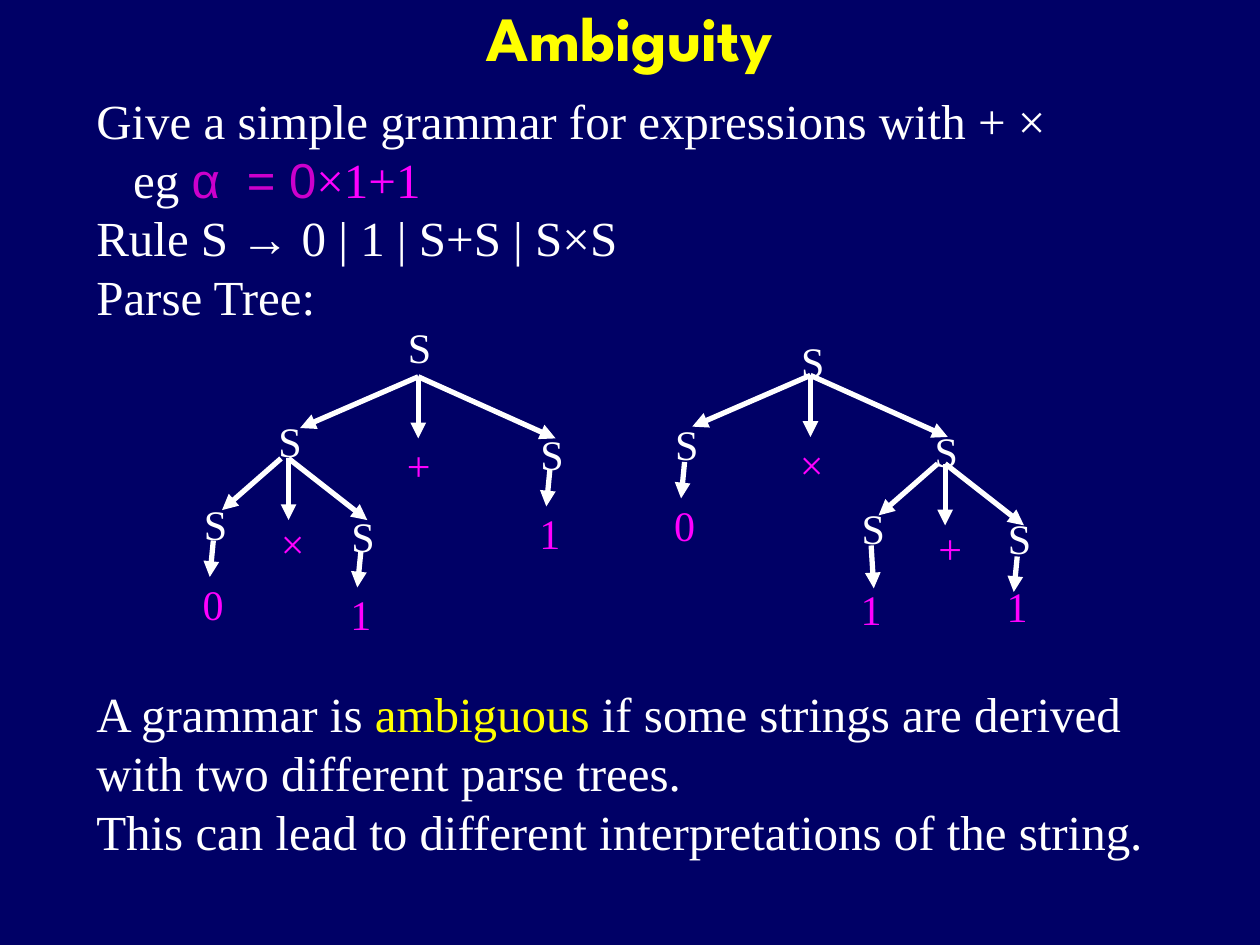
"""Build a slide on grammar ambiguity with two parse trees."""
import pptx
import pptx.dml.color
import pptx.enum.shapes
import pptx.enum.text
import pptx.oxml.ns
import pptx.util
from lxml import etree

Pt = pptx.util.Pt
RGBColor = pptx.dml.color.RGBColor
qn = pptx.oxml.ns.qn

NAVY = RGBColor(0x00, 0x00, 0x66)
WHITE = RGBColor(0xFF, 0xFF, 0xFF)
YELLOW = RGBColor(0xFF, 0xFF, 0x00)
PURPLE = RGBColor(0xCC, 0x00, 0xCC)
MAGENTA = RGBColor(0xFF, 0x00, 0xFF)
SERIF, SANS, DISPLAY = "Times New Roman", "Arial", "League Spartan"

TITLE = "Ambiguity"
INTRO = [
    (0, [("Give a simple grammar for expressions with + ×", WHITE, SERIF)]),
    (21, [("eg ", WHITE, SERIF), ("α  = 0", PURPLE, SANS), ("×1+1", MAGENTA, SERIF)]),
    (0, [("Rule S → 0 | 1 | S+S | S×S", WHITE, SERIF)]),
    (0, [("Parse Tree:", WHITE, SERIF)]),
]
CONCLUSION = [
    (0, [("A grammar is ", WHITE, SERIF), ("ambiguous", YELLOW, SERIF),
         (" if some strings are derived\nwith two different parse trees.", WHITE, SERIF)]),
    (0, [("This can lead to different interpretations of the string.", WHITE, SERIF)]),
]

ROOT_FAN = [(0, -67.5, 29.3), (0, 0, 35.2), (0, 78.5, 35.2)]
INNER_FAN = [(-4.3, -38, 29.5), (0, 0, 35.2), (0, 45, 35.2)]

# (fan apexes), (letters: text, left, top), (leaves: digit, left, top, arrow start, dx, dy, digit drop)
TREES = [
    {
        "apexes": [(239, 215.3), (164.9, 262)],
        "letters": [("S", 226, 180), ("+", 225.4, 247.7), ("S", 152, 234), ("×", 153.4, 292.3)],
        "leaves": [("1", 193.7, 288, 27.4, -2, 20.3, 44.8),
                   ("0", 109.4, 281.5, 27.4, -2, 20.8, 45.4),
                   ("1", 301.7, 241.2, 27.4, -2, 20.8, 45.4)],
    },
    {
        "apexes": [(463.1, 214.5), (540.1, 265)],
        "letters": [("S", 450.7, 188), ("×", 450, 247), ("S", 527, 239.8), ("+", 529.2, 295.2)],
        "leaves": [("1", 568.8, 289.4, 28.6, -2, 20.3, 39),
                   ("1", 485.3, 283.7, 28, 1.5, 24.5, 46.1),
                   ("0", 378.7, 235.4, 28.6, -2, 20.8, 46.8)],
    },
]


def add_text(slide, left, top, width, height, paragraphs):
    frame = slide.shapes.add_textbox(Pt(left), Pt(top), Pt(width), Pt(height)).text_frame
    frame.word_wrap = True
    for index, (indent, pieces) in enumerate(paragraphs):
        paragraph = frame.paragraphs[0] if index == 0 else frame.add_paragraph()
        paragraph.font.size = Pt(28)
        if indent:
            paragraph._p.get_or_add_pPr().set("marL", str(Pt(indent)))
        for text, color, font_name in pieces:
            for line_number, line in enumerate(text.split("\n")):
                if line_number:
                    paragraph.add_line_break()
                run = paragraph.add_run()
                run.text = line
                run.font.size = Pt(28)
                run.font.name = font_name
                run.font.color.rgb = color


def add_symbol(group, text, left, top):
    width = 26.6 if text.isdigit() else 28
    frame = group.shapes.add_textbox(Pt(left), Pt(top), Pt(width), Pt(36)).text_frame
    frame.word_wrap = False
    frame.auto_size = pptx.enum.text.MSO_AUTO_SIZE.SHAPE_TO_FIT_TEXT
    paragraph = frame.paragraphs[0]
    paragraph.text = text
    paragraph.font.size = Pt(24)
    paragraph.font.name = SERIF
    paragraph.font.color.rgb = WHITE if text == "S" else MAGENTA


def add_arrow(group, start_x, start_y, end_x, end_y):
    arrow = group.shapes.add_connector(
        pptx.enum.shapes.MSO_CONNECTOR.STRAIGHT,
        Pt(start_x), Pt(start_y), Pt(end_x), Pt(end_y))
    arrow.line.color.rgb = WHITE
    arrow.line.width = Pt(3)
    etree.SubElement(arrow.line._get_or_add_ln(), qn("a:tailEnd"), type="triangle")
    etree.SubElement(arrow._element.spPr, qn("a:effectLst"))


def add_tree(slide, tree):
    group = slide.shapes.add_group_shape()
    for (x, y), fan in zip(tree["apexes"], (ROOT_FAN, INNER_FAN)):
        for start_dx, end_dx, end_dy in fan:
            add_arrow(group, x + start_dx, y, x + end_dx, y + end_dy)
    for text, left, top in tree["letters"]:
        add_symbol(group, text, left, top)
    for digit, left, top, start, dx, dy, drop in tree["leaves"]:
        add_symbol(group, "S", left, top)
        x, y = left + 12.5, top + start
        add_arrow(group, x, y, x + dx, y + dy)
        add_symbol(group, digit, left - 0.6, top + drop)


def add_title(slide):
    title = slide.shapes.title
    title.left, title.top, title.width, title.height = Pt(54), Pt(-24), Pt(612), Pt(90)
    title.text_frame.vertical_anchor = pptx.enum.text.MSO_ANCHOR.MIDDLE
    paragraph = title.text_frame.paragraphs[0]
    paragraph.text = TITLE
    paragraph.alignment = pptx.enum.text.PP_ALIGN.CENTER
    paragraph.font.size = Pt(36)
    paragraph.font.bold = True
    paragraph.font.name = DISPLAY
    paragraph.font.color.rgb = YELLOW


def main():
    presentation = pptx.Presentation()
    presentation.slide_width, presentation.slide_height = Pt(720), Pt(540)
    slide = presentation.slides.add_slide(presentation.slide_layouts[5])
    slide.background.fill.solid()
    slide.background.fill.fore_color.rgb = NAVY
    add_title(slide)
    add_text(slide, 48, 48, 612, 143, INTRO)
    for tree in TREES:
        add_tree(slide, tree)
    add_text(slide, 48, 387, 654, 143, CONCLUSION)
    presentation.save("out.pptx")


if __name__ == "__main__":
    main()
